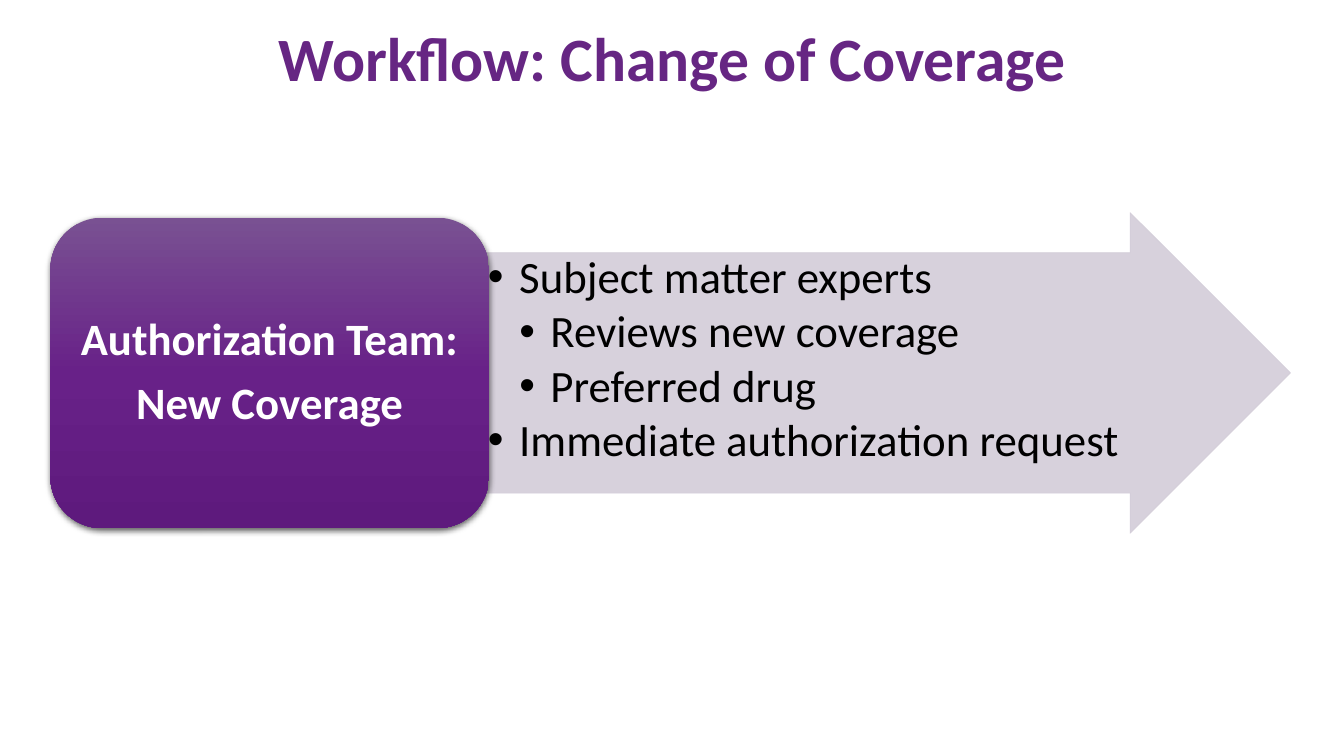
from copy import deepcopy

from lxml.etree import SubElement
from pptx import Presentation
from pptx.dml.color import RGBColor
from pptx.enum.shapes import MSO_SHAPE
from pptx.enum.text import MSO_ANCHOR, PP_ALIGN
from pptx.oxml.ns import qn
from pptx.util import Inches, Pt

WIDTH, HEIGHT = Inches(13.33), Inches(7.5)
FONT = "Calibri"
INDENT = Inches(0.31)

TITLE_PURPLE = RGBColor(0x66, 0x26, 0x83)
ARROW_LILAC = RGBColor(0xD3, 0xCD, 0xD9)
TEAM_GRADIENT = [
    (0, RGBColor(0x79, 0x51, 0x92)),
    (0.5, RGBColor(0x68, 0x21, 0x88)),
    (1, RGBColor(0x5E, 0x1A, 0x7D)),
]
BLACK = RGBColor(0, 0, 0)
WHITE = RGBColor(0xFF, 0xFF, 0xFF)

TITLE = "Workflow: Change of Coverage"
TEAM = ["Authorization Team:", "New Coverage"]
# (bullet level, text)
TASKS = [
    (1, "Subject matter experts"),
    (2, "Reviews new coverage"),
    (2, "Preferred drug"),
    (1, "Immediate authorization request"),
]


def box(left, top, width, height):
    """Turn shares of the slide's size into lengths."""
    return (int(WIDTH * left), int(HEIGHT * top),
            int(WIDTH * width), int(HEIGHT * height))


def child(parent, tag, **attributes):
    return SubElement(parent, qn(tag), attributes)


def set_frame(tf, anchor, side, edge):
    tf.word_wrap = True
    tf.vertical_anchor = anchor
    tf.margin_left = tf.margin_right = Inches(side)
    tf.margin_top = tf.margin_bottom = Inches(edge)


def write(tf, lines, size, color, bold=False, align=PP_ALIGN.CENTER, after=0):
    tf.text = "\n".join(lines)
    for p in tf.paragraphs:
        p.alignment = align
        p.line_spacing = 0.9
        p.space_after = Pt(after)
        for r in p.runs:
            r.font.name, r.font.size, r.font.bold = FONT, Pt(size), bold
            r.font.color.rgb = color


def add_bullet(p, level):
    p.level = level
    pPr = p._p.get_or_add_pPr()
    pPr.set("marL", str(INDENT * level))
    pPr.set("indent", str(-INDENT))
    child(pPr, "a:buFont", typeface="Arial")
    child(pPr, "a:buChar", char="•")


def add_title(slide):
    tf = slide.shapes.add_textbox(*box(0.069, 0.013, 0.863, 0.136)).text_frame
    set_frame(tf, MSO_ANCHOR.MIDDLE, 0.1, 0.05)
    write(tf, [TITLE], 44, TITLE_PURPLE, bold=True)


def add_task_arrow(slide):
    s = slide.shapes.add_shape(MSO_SHAPE.RIGHT_ARROW,
                               *box(0.3616, 0.2813, 0.5986, 0.424))
    s.adjustments[0], s.adjustments[1] = 0.75, 0.5
    s.shadow.inherit = False
    s.line.width = Pt(0.5)
    for fill in (s.fill, s.line.fill):
        fill.solid()
        fill.fore_color.rgb = ARROW_LILAC
    # Slight transparency of fill and outline
    for color in s._element.spPr.iter(qn("a:srgbClr")):
        child(color, "a:alpha", val="90000")
    tf = s.text_frame
    set_frame(tf, MSO_ANCHOR.TOP, 0.02, 0.02)
    write(tf, [text for _, text in TASKS], 32, BLACK,
          align=PP_ALIGN.LEFT, after=4.2)
    for p, (level, _) in zip(tf.paragraphs, TASKS):
        add_bullet(p, level)


def add_team_card(slide):
    s = slide.shapes.add_shape(MSO_SHAPE.ROUNDED_RECTANGLE,
                               *box(0.0375, 0.288, 0.3263, 0.4107))
    s.line.fill.background()
    # Three-stop gradient running downwards
    s.fill.gradient()
    s.fill.gradient_angle = 270
    stops = s._element.spPr.find(".//" + qn("a:gsLst"))
    stops.insert(1, deepcopy(stops[0]))
    for stop, (position, color) in zip(s.fill.gradient_stops, TEAM_GRADIENT):
        stop.position = position
        stop.color.rgb = color
    # Soft shadow below
    s.shadow.inherit = False
    effects = s._element.spPr.find(qn("a:effectLst"))
    shadow = child(effects, "a:outerShdw", blurRad=str(Pt(4.5)),
                   dist=str(Pt(1.5)), dir="5400000", rotWithShape="0")
    color = child(shadow, "a:srgbClr", val="000000")
    child(color, "a:alpha", val="63000")
    set_frame(s.text_frame, MSO_ANCHOR.MIDDLE, 0.13, 0.07)
    write(s.text_frame, TEAM, 32, WHITE, bold=True, after=10.6)


def main():
    prs = Presentation()
    prs.slide_width, prs.slide_height = WIDTH, HEIGHT
    slide = prs.slides.add_slide(prs.slide_layouts[6])
    add_title(slide)
    add_task_arrow(slide)
    add_team_card(slide)
    prs.save("out.pptx")


if __name__ == "__main__":
    main()
